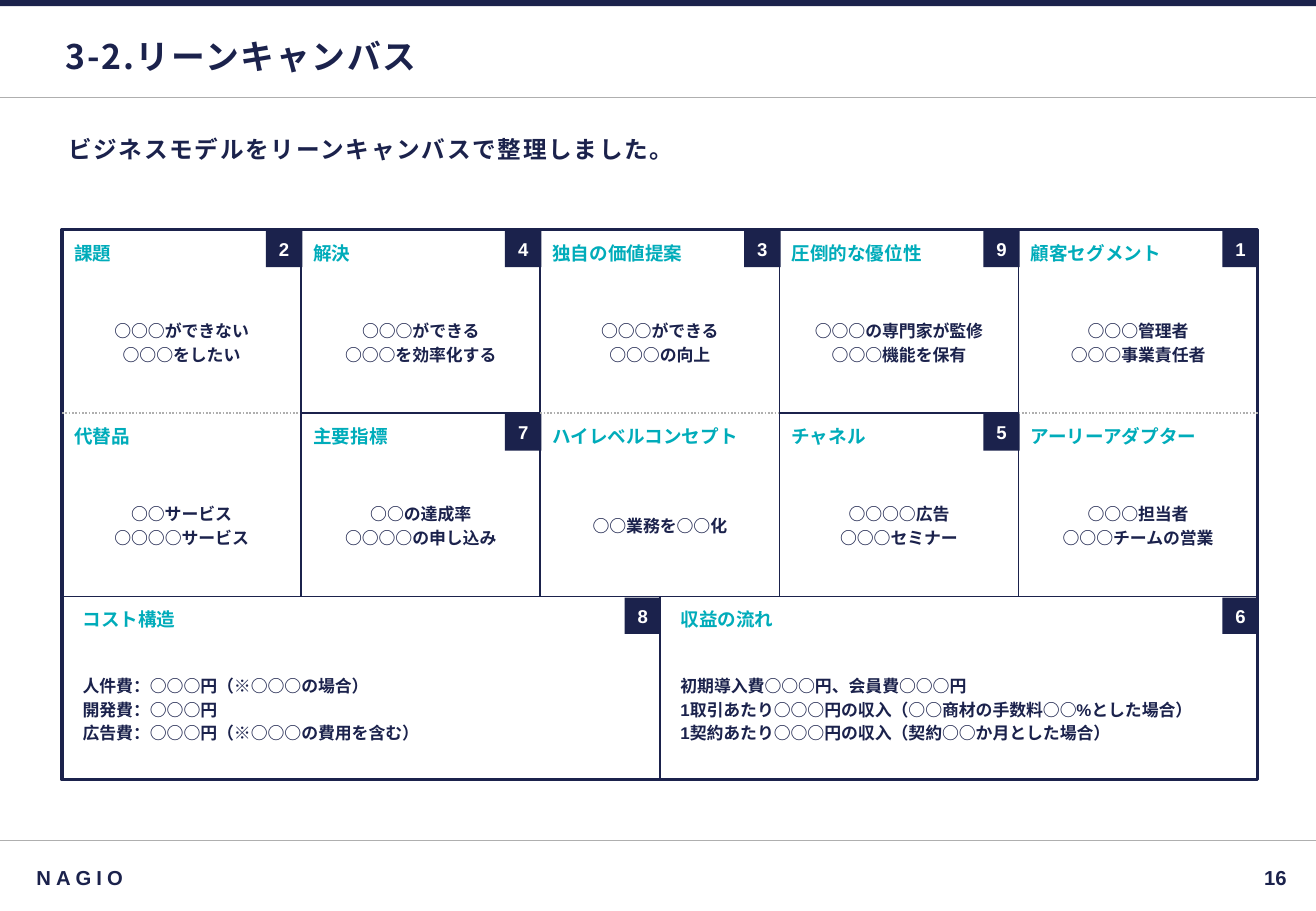
"""Builds a lean canvas slide with numbered cells."""
from lxml.etree import SubElement
from pptx import Presentation
from pptx.dml.color import RGBColor
from pptx.enum.dml import MSO_LINE
from pptx.enum.shapes import MSO_CONNECTOR, MSO_SHAPE
from pptx.enum.text import MSO_ANCHOR, MSO_AUTO_SIZE, PP_ALIGN
from pptx.oxml.ns import qn
from pptx.util import Inches, Pt

COLORS = {"navy": "1B224C", "teal": "00ACBA", "gray": "AFAFAF", "white": "FFFFFF"}
JP_FONT = "Noto Sans CJK JP"
SLIDE_W, SLIDE_H = 10.83, 7.5
LEFT, TOP, WIDTH, ROW_H = 0.51, 1.89, 9.84, 1.51
COL_W, HALF_W = WIDTH / 5, WIDTH / 2
BADGE = 0.3

UPPER_ROWS = [
    [("課題", "2", ["○○○ができない", "○○○をしたい"]),
     ("解決", "4", ["○○○ができる", "○○○を効率化する"]),
     ("独自の価値提案", "3", ["○○○ができる", "○○○の向上"]),
     ("圧倒的な優位性", "9", ["○○○の専門家が監修", "○○○機能を保有"]),
     ("顧客セグメント", "1", ["○○○管理者", "○○○事業責任者"])],
    [("代替品", "", ["○○サービス", "○○○○サービス"]),
     ("主要指標", "7", ["○○の達成率", "○○○○の申し込み"]),
     ("ハイレベルコンセプト", "", ["○○業務を○○化"]),
     ("チャネル", "5", ["○○○○広告", "○○○セミナー"]),
     ("アーリーアダプター", "", ["○○○担当者", "○○○チームの営業"])],
]
BOTTOM_ROW = [
    ("コスト構造", "8", ["人件費：○○○円（※○○○の場合）", "開発費：○○○円",
                    "広告費：○○○円（※○○○の費用を含む）"]),
    ("収益の流れ", "6", ["初期導入費○○○円、会員費○○○円",
                    "1取引あたり○○○円の収入（○○商材の手数料○○%とした場合）",
                    "1契約あたり○○○円の収入（契約○○か月とした場合）"]),
]


def rgb(name):
    return RGBColor.from_string(COLORS[name])


def write(sp, lines, size, color="navy", align=PP_ALIGN.LEFT, anchor=MSO_ANCHOR.MIDDLE,
          font="Arial", inset=0.04, after=0, spacing=0):
    tf = sp.text_frame
    tf.word_wrap = True
    tf.auto_size = MSO_AUTO_SIZE.NONE
    tf.vertical_anchor = anchor
    tf.margin_left = tf.margin_right = tf.margin_top = tf.margin_bottom = Inches(inset)
    tf.text = "\n".join(lines)
    for p in tf.paragraphs:
        p.alignment = align
        p.space_after = Pt(after)
        p.font.name = font
        p.font.size = Pt(size)
        p.font.bold = True
        p.font.color.rgb = rgb(color)
        props = p._p.get_or_add_pPr().get_or_add_defRPr()
        props.set("spc", str(spacing * 100))
        SubElement(props, qn("a:ea")).set("typeface", JP_FONT)


def add_text(s, x, y, w, h, lines, size, **style):
    sp = s.shapes.add_textbox(Inches(x), Inches(y), Inches(w), Inches(h))
    write(sp, lines, size, **style)


def add_rect(s, x, y, w, h, fill, line=None):
    sp = s.shapes.add_shape(MSO_SHAPE.RECTANGLE, Inches(x), Inches(y), Inches(w), Inches(h))
    sp.shadow.inherit = False
    sp.fill.solid()
    sp.fill.fore_color.rgb = rgb(fill)
    if line:
        sp.line.color.rgb = rgb(line)
        sp.line.width = Pt(2)
    else:
        sp.line.fill.background()
    return sp


def add_line(s, x1, y1, x2, y2, color="navy", width=1, dotted=False):
    cxn = s.shapes.add_connector(MSO_CONNECTOR.STRAIGHT, Inches(x1), Inches(y1),
                                 Inches(x2), Inches(y2))
    cxn.line.color.rgb = rgb(color)
    cxn.line.width = Pt(width)
    if dotted:
        cxn.line.dash_style = MSO_LINE.ROUND_DOT
    SubElement(cxn._element.spPr, qn("a:effectLst"))


def add_cell(s, x, y, w, pad, cell, align):
    heading, number, body = cell
    if number:
        badge = add_rect(s, x + w - BADGE + 0.01, y + 0.01, BADGE, BADGE, "navy")
        write(badge, [number], 11, color="white", align=PP_ALIGN.CENTER, inset=0)
    text_w = w - 2 * pad
    add_text(s, x + pad, y + 0.07, text_w, 0.24, [heading], 11, color="teal", after=2)
    add_text(s, x + pad, y + 0.44, text_w, 0.98, body, 10, align=align, after=2)


def add_grid(s):
    middle, low, bottom = (TOP + ROW_H * n for n in (1, 2, 3))
    add_rect(s, LEFT, TOP, WIDTH, bottom - TOP, "white", "navy")
    for col in range(5):
        x = LEFT + COL_W * col
        if col:
            add_line(s, x, TOP, x, low)
        split = col % 2 == 1
        add_line(s, x, middle, x + COL_W, middle, "navy" if split else "gray", dotted=not split)
    add_line(s, LEFT, low, LEFT + WIDTH, low)
    add_line(s, LEFT + HALF_W, low, LEFT + HALF_W, bottom)


def add_canvas(s):
    add_grid(s)
    for row, cells in enumerate(UPPER_ROWS):
        for col, cell in enumerate(cells):
            add_cell(s, LEFT + COL_W * col, TOP + ROW_H * row, COL_W, 0.06, cell,
                     PP_ALIGN.CENTER)
    for col, cell in enumerate(BOTTOM_ROW):
        add_cell(s, LEFT + HALF_W * col, TOP + ROW_H * 2, HALF_W, 0.13, cell, PP_ALIGN.LEFT)


def add_title(s, text):
    sp = s.shapes.title
    sp.left, sp.top, sp.width, sp.height = Inches(0.5), Inches(0.21), Inches(9.84), Inches(0.51)
    write(sp, [text], 20, font=JP_FONT, spacing=1)


def main():
    prs = Presentation()
    prs.slide_width, prs.slide_height = Inches(SLIDE_W), Inches(SLIDE_H)
    s = prs.slides.add_slide(prs.slide_layouts[5])
    for y in (0.8, 6.92):
        add_line(s, 0, y, SLIDE_W, y, "gray", 0.75)
    add_rect(s, 0, 0, SLIDE_W, 0.05, "navy")
    add_title(s, "3-2.リーンキャンバス")
    add_text(s, 0.52, 1.07, 9.84, 0.79, ["ビジネスモデルをリーンキャンバスで整理しました。"], 14,
             anchor=MSO_ANCHOR.TOP, after=6, spacing=1)
    add_canvas(s)
    add_text(s, 0.26, 7.07, 8.6, 0.31, ["NAGIO"], 12, spacing=3)
    add_text(s, 9.06, 7.07, 1.57, 0.31, ["16"], 12, align=PP_ALIGN.RIGHT)
    prs.save("out.pptx")


if __name__ == "__main__":
    main()
